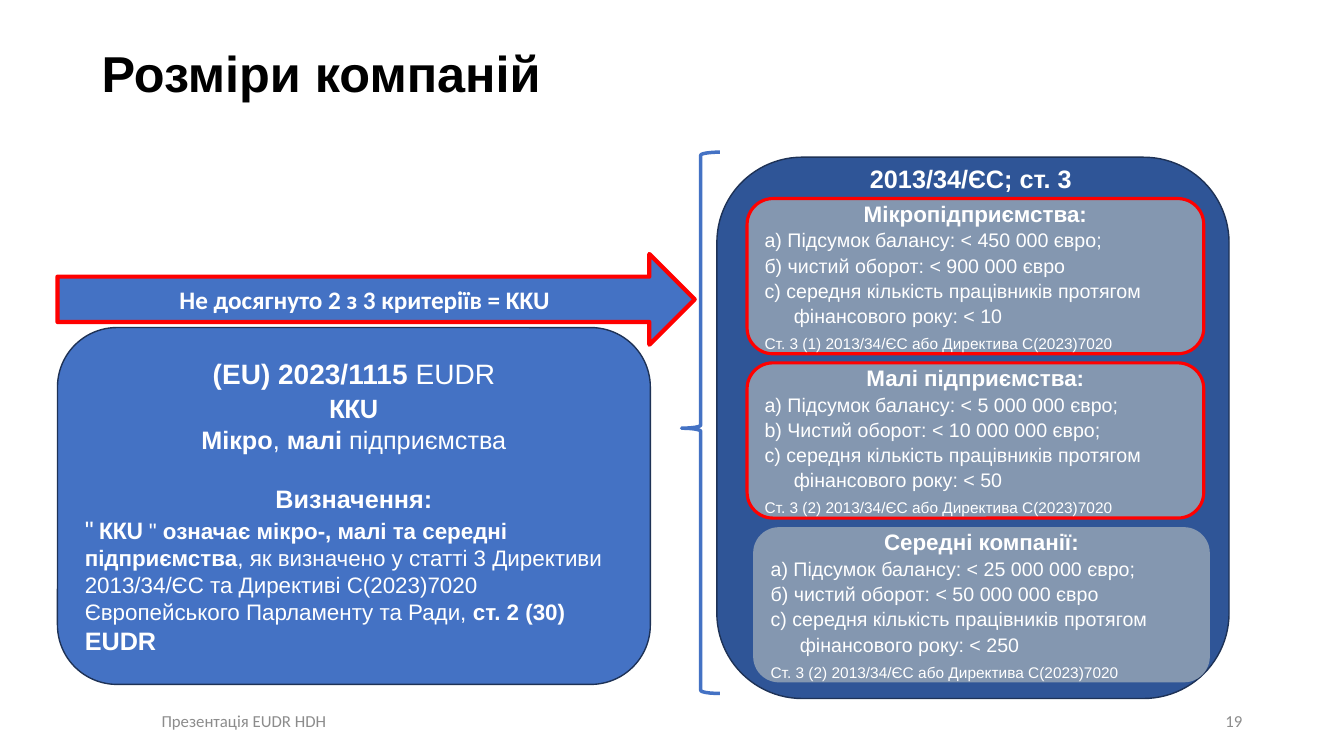
from pptx import Presentation
from pptx.dml.color import RGBColor
from pptx.enum.shapes import MSO_SHAPE
from pptx.enum.text import MSO_ANCHOR, PP_ALIGN
from pptx.util import Inches, Pt

CELL = 0.1  # inches per grid column and row
LEFT, MID, RIGHT = PP_ALIGN.LEFT, PP_ALIGN.CENTER, PP_ALIGN.RIGHT
BLUE, NAVY, EDGE, SLATE = "4472C4", "2F5597", "1E3256", "8497B0"
RED, WHITE, BLACK, GREY = "FF0000", "FFFFFF", "000000", "8C8C8C"

CARDS = [
    ("Мікропідприємства:", [
        "a) Підсумок балансу: < 450 000 євро;",
        "б) чистий оборот: < 900 000 євро",
        "c) середня кількість працівників протягом фінансового року: < 10"],
     "Ст. 3 (1) 2013/34/ЄС або Директива C(2023)7020", RED),
    ("Малі підприємства:", [
        "a) Підсумок балансу: < 5 000 000 євро;",
        "b) Чистий оборот: < 10 000 000 євро;",
        "c) середня кількість працівників протягом фінансового року: < 50"],
     "Ст. 3 (2) 2013/34/ЄС або Директива C(2023)7020", RED),
    ("Середні компанії:", [
        "a) Підсумок балансу: < 25 000 000 євро;",
        "б) чистий оборот: < 50 000 000 євро",
        "c) середня кількість працівників протягом фінансового року: < 250"],
     "Ст. 3 (2) 2013/34/ЄС або Директива C(2023)7020", None),
]


def paint(hue):
    return RGBColor.from_string(hue)


def inner(box, x, y, w, h):
    """Box of w by h cells, x and y cells from the corner of box."""
    return box[0] + x, box[1] + y, w, h


def span(box):
    return [Inches(n * CELL) for n in box]


def shape(slide, kind, box, fill=None, line=None, width=1):
    item = slide.shapes.add_shape(kind, *span(box))
    item.shadow.inherit = False
    if fill:
        item.fill.solid()
        item.fill.fore_color.rgb = paint(fill)
    else:
        item.fill.background()
    if line:
        item.line.color.rgb = paint(line)
        item.line.width = Pt(width)
    else:
        item.line.fill.background()
    return item


def write(item, rows, hue=WHITE):
    """Fill a shape with rows of (align, runs); a run is (text, size, bold, font)."""
    frame = item.text_frame
    frame.word_wrap = True
    frame.vertical_anchor = MSO_ANCHOR.MIDDLE
    for i, (align, runs) in enumerate(rows):
        para = frame.add_paragraph() if i else frame.paragraphs[0]
        para.alignment = align
        for text, size, bold, name in runs:
            run = para.add_run()
            run.text = text
            run.font.size, run.font.bold, run.font.name = Pt(size), bold, name
            run.font.color.rgb = paint(hue)
    return frame.paragraphs


def label(slide, box, text, size, bold, font, hue, align=LEFT):
    item = slide.shapes.add_textbox(*span(box))
    return write(item, [(align, [(text, size, bold, font)])], hue)


def card(slide, box, head, points, source, line):
    item = shape(slide, MSO_SHAPE.ROUNDED_RECTANGLE, box, SLATE, line, 2.25)
    rows = [(MID, [(head, 16, True, "Arial")])]
    rows += [(LEFT, [(text, 14, False, "Arial")]) for text in points]
    rows.append((LEFT, [(source, 11, False, "Arial")]))
    paras = write(item, rows)
    for para in paras[1:]:
        para.line_spacing = Pt(18)
    for para in paras[3:]:
        props = para._p.get_or_add_pPr()
        props.set("marL", str(Inches(0.29)))
        props.set("indent", str(-Inches(0.29)))


def panel(slide, box):
    """Size classes with their criteria, and the brace beside them."""
    shape(slide, MSO_SHAPE.ROUNDED_RECTANGLE, box, NAVY, EDGE)
    for i, (head, points, source, line) in enumerate(CARDS):
        x = 3 if line else 3.6
        card(slide, inner(box, x, 4.1 + 16.3 * i, 45.3, 15.4),
             head, points, source, line)
    brace = shape(slide, MSO_SHAPE.LEFT_BRACE,
                  inner(box, -3.5, -0.5, 3.8, box[3]), None, BLUE, 2.5)
    brace.adjustments[0], brace.adjustments[1] = 0.08, 0.51
    label(slide, inner(box, 14.2, 0.1, 22.9, 4),
          "2013/34/ЄС; ст. 3", 18, True, "Arial", WHITE)


def meaning(slide, box):
    """Definition box with the arrow above it."""
    item = shape(slide, MSO_SHAPE.ROUNDED_RECTANGLE, box, BLUE, EDGE)
    paras = write(item, [
        (MID, [("(EU) 2023/1115 ", 20, True, "Arial"),
               ("EUDR", 20, False, "Arial")]),
        (MID, [("KKU", 20, True, "Calibri")]),
        (MID, [("Мікро", 18, True, "Arial"), (", ", 18, False, "Arial"),
               ("малі ", 18, True, "Arial"),
               ("підприємства", 18, False, "Arial")]),
        (MID, [("Визначення:", 18, True, "Arial")]),
        (LEFT, [("\"", 18, False, "Arial"), (" KKU ", 18, True, "Calibri"),
                ("\" ", 16, False, "Arial"),
                ("означає мікро-, малі та середні підприємства",
                 16, True, "Arial"),
                (", як визначено у статті 3 Директиви 2013/34/ЄС та "
                 "Директиві C(2023)7020 Європейського Парламенту та Ради, ",
                 16, False, "Arial"),
                ("ст. 2 (30) ", 16, True, "Arial"),
                ("EUDR", 18, True, "Arial")]),
    ])
    paras[3].space_before = Pt(21)
    arrow = shape(slide, MSO_SHAPE.RIGHT_ARROW,
                  inner(box, 0, -7.3, 63.2, 9), BLUE, RED, 3)
    write(arrow, [(MID, [("Не досягнуто 2 з 3 критеріїв = KKU",
                          18, True, "Calibri")])])


def footer(slide, box):
    label(slide, inner(box, 0, 0, 30, box[3]),
          "Презентація EUDR HDH", 12, False, "Calibri", GREY, MID)
    label(slide, inner(box, box[2] - 13.5, 0, 13.5, box[3]),
          "19", 12, False, "Calibri", GREY, RIGHT)


def main():
    deck = Presentation()
    deck.slide_width, deck.slide_height = Inches(13.33), Inches(7.5)
    slide = deck.slides.add_slide(deck.slide_layouts[6])
    title = label(slide, (9.1, 3.6, 115, 7.9),
                  "Розміри компаній", 36, True, "Arial", BLACK)
    title[0].line_spacing = 0.9
    footer(slide, (9.2, 69.5, 115, 4))
    panel(slide, (71.1, 15.6, 50.8, 53.7))
    meaning(slide, (5.7, 32.5, 58.8, 35.4))
    deck.save("out.pptx")


if __name__ == "__main__":
    main()
